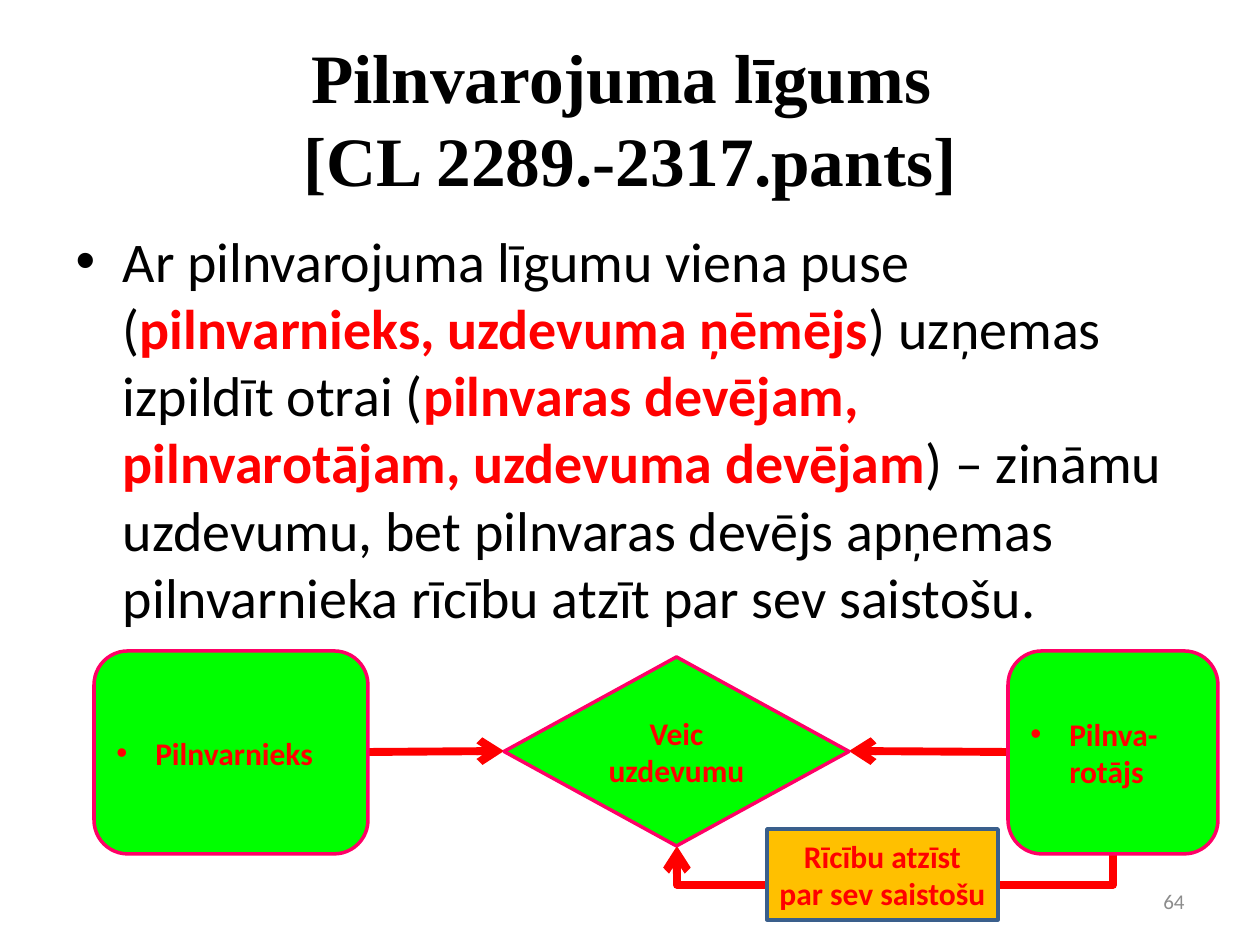
from lxml import etree
from pptx import Presentation
from pptx.dml.color import RGBColor
from pptx.enum.shapes import MSO_CONNECTOR, MSO_SHAPE
from pptx.enum.text import MSO_ANCHOR, PP_ALIGN
from pptx.oxml.ns import qn
from pptx.util import Pt

PX = 914400 / 126
STRAIGHT, ELBOW = MSO_CONNECTOR.STRAIGHT, MSO_CONNECTOR.ELBOW
ROUNDED, DECISION, RECTANGLE = (
    MSO_SHAPE.ROUNDED_RECTANGLE, MSO_SHAPE.FLOWCHART_DECISION, MSO_SHAPE.RECTANGLE)
MIDDLE = MSO_ANCHOR.MIDDLE
CENTER, JUSTIFY, RIGHT = PP_ALIGN.CENTER, PP_ALIGN.JUSTIFY, PP_ALIGN.RIGHT
COLORS = {"black": "000000", "red": "FF0000", "green": "00FF00", "pink": "FF0066",
          "amber": "FFC000", "blue": "3A5F8C", "gray": "8C8C8C"}


def px(*lengths):
    return [round(length * PX) for length in lengths]


def style(run, size, color, bold=False, font="Calibri"):
    run.font.name, run.font.size, run.font.bold = font, Pt(size), bold
    run.font.color.rgb = RGBColor.from_string(COLORS[color])


prs = Presentation()
prs.slide_width, prs.slide_height = px(1260, 945)
slide = prs.slides.add_slide(prs.slide_layouts[1])

title = slide.shapes.title
title.left, title.top, title.width, title.height = px(63, 38, 1134, 158)
title.text_frame.text = "Pilnvarojuma līgums \v[CL 2289.-2317.pants]"
for run in title.text_frame.paragraphs[0].runs:
    style(run, 39.6, "black", True, "Times New Roman")

definition = slide.placeholders[1]
definition.left, definition.top, definition.width, definition.height = px(63, 220, 1134, 451)
definition_parts = [
    ("Ar pilnvarojuma līgumu viena puse (", False),
    ("pilnvarnieks, uzdevuma ņēmējs", True),
    (") uzņemas izpildīt otrai (", False),
    ("pilnvaras devējam, pilnvarotājam, uzdevuma devējam", True),
    (") – zināmu uzdevumu, bet pilnvaras devējs apņemas "
     "pilnvarnieka rīcību atzīt par sev saistošu.", False),
]
for words, is_party in definition_parts:
    run = definition.text_frame.paragraphs[0].add_run()
    run.text = words
    style(run, 32, "red" if is_party else "black", is_party)

arrows = [
    (STRAIGHT, 368, 752, 504, 751),
    (STRAIGHT, 1008, 752, 849, 751),
    (ELBOW, 899, 632, 891, 1068),
]
for kind, *ends in arrows:
    arrow = slide.shapes.add_connector(kind, *px(*ends))
    arrow.line.width = Pt(4.5)
    arrow.line.color.rgb = RGBColor.from_string(COLORS["red"])
    etree.SubElement(arrow.line._get_or_add_ln(), qn("a:tailEnd"), type="arrow")
    properties = arrow._element.spPr
    etree.SubElement(properties, qn("a:effectLst"))
    if kind == ELBOW:
        properties.find(qn("a:xfrm")).set("rot", "5400000")
        adjustments = properties.find(qn("a:prstGeom")).find(qn("a:avLst"))
        etree.SubElement(adjustments, qn("a:gd"), name="adj1", fmla="val -387500")

steps = [
    (ROUNDED, "Pilnvarnieks", (94, 651, 274, 203), "green", "pink", True),
    (ROUNDED, "Pilnva-rotājs", (1008, 651, 210, 203), "green", "pink", True),
    (DECISION, "Veic uzdevumu", (504, 657, 345, 189), "green", "pink", False),
    (RECTANGLE, "Rīcību atzīst par sev saistošu", (767, 829, 231, 91), "amber", "blue", False),
]
for kind, label, box, fill, outline, bulleted in steps:
    step = slide.shapes.add_shape(kind, *px(*box))
    step.shadow.inherit = False
    step.fill.solid()
    step.fill.fore_color.rgb = RGBColor.from_string(COLORS[fill])
    step.line.color.rgb = RGBColor.from_string(COLORS[outline])
    step.line.width = Pt(2)
    step.text_frame.text = label
    step.text_frame.word_wrap = True
    step.text_frame.vertical_anchor = MIDDLE
    paragraph = step.text_frame.paragraphs[0]
    paragraph.alignment = JUSTIFY if bulleted else CENTER
    style(paragraph.runs[0], 18, "red", True)
    if bulleted:
        indent = px(39)[0]
        bullet_properties = paragraph._p.get_or_add_pPr()
        bullet_properties.set("marL", str(indent))
        bullet_properties.set("indent", str(-indent))
        etree.SubElement(bullet_properties, qn("a:buFont"), typeface="Arial")
        etree.SubElement(bullet_properties, qn("a:buChar"), char="•")

page_number = slide.shapes.add_textbox(*px(903, 876, 294, 50))
page_number.text_frame.text = "64"
page_number.text_frame.word_wrap = True
page_number.text_frame.vertical_anchor = MIDDLE
page_number.text_frame.paragraphs[0].alignment = RIGHT
style(page_number.text_frame.paragraphs[0].runs[0], 12, "gray")

prs.save("out.pptx")
